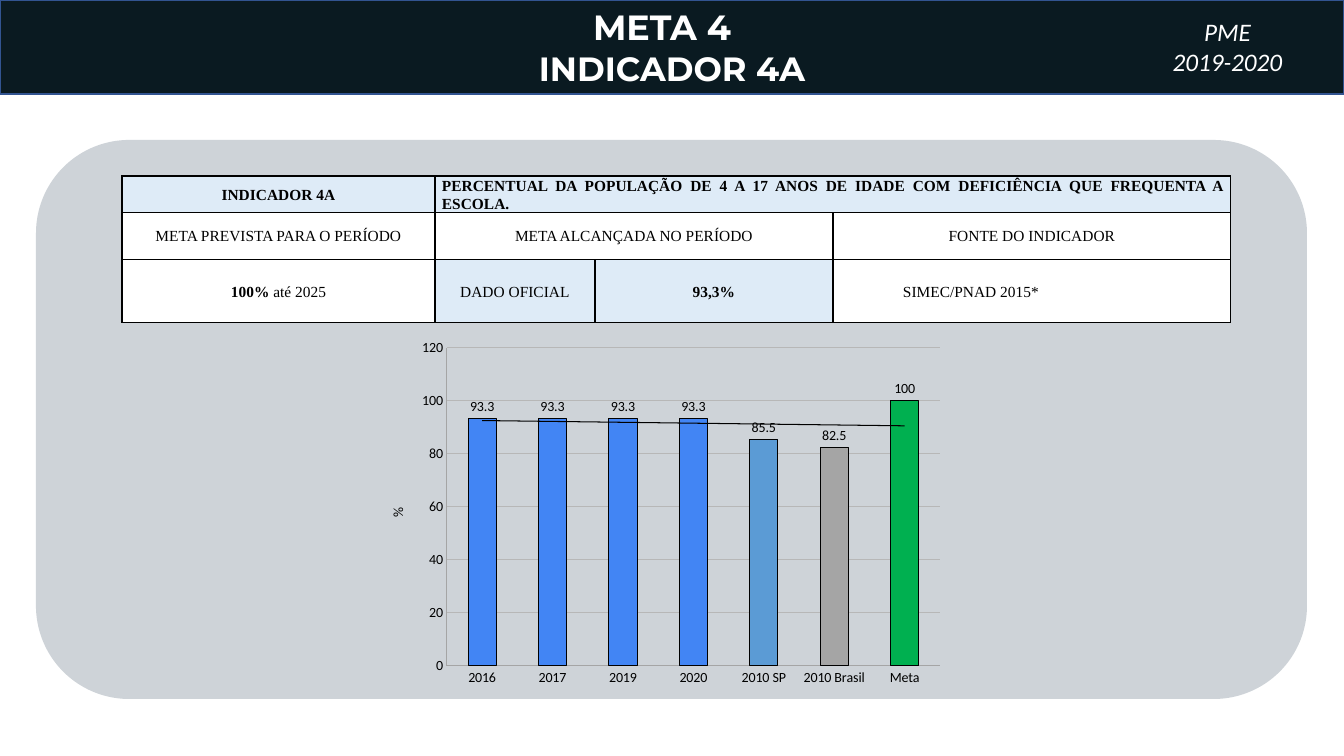
"""Build the slide for goal 4, indicator 4A, with its table and chart."""
from lxml import etree
from pptx import Presentation
from pptx.chart.data import CategoryChartData
from pptx.dml.color import RGBColor
from pptx.enum.chart import XL_CHART_TYPE as ChartType, XL_LABEL_POSITION as LabelPosition
from pptx.enum.chart import XL_TICK_MARK as TickMark
from pptx.enum.shapes import MSO_SHAPE as Preset
from pptx.enum.text import MSO_ANCHOR as Anchor, PP_ALIGN as Align
from pptx.oxml import parse_xml
from pptx.oxml.ns import nsdecls, qn
from pptx.util import Pt

COLORS = {
    "night": "0A1A21", "edge": "325491", "panel": "CED3D8", "white": "FFFFFF",
    "black": "000000", "pale": "DEEBF7", "blue": "4285F4", "sky": "5B9BD5",
    "gray": "A5A5A5", "green": "00B050", "grid": "B7B7B7",
}
PX = 914400 / 100.8
SIZE = (1344, 756)
HEADER = (0, 0, 1344, 94)
PANEL = (36, 140, 1271, 559)
PERIOD = (1096, 11, 263, 72)
TABLE = (122, 176, 1109, 145)
CHART = (369, 333, 583, 360)
PLOT = (447, 348, 493, 318)

TITLE = [("META 4", 25, 20), ("INDICADOR 4A", 24, 0)]
PERIOD_LINES = ["PME", "2019-2020"]
COLUMNS = [313, 160, 238, 398]
ROWS = [35, 47, 63]
SIDE_MARGIN = 7
SOURCE_INDENT = 63

# row, column, columns spanned, fill, alignment, indent, runs
CELLS = [
    (0, 0, 1, "pale", Align.CENTER, 0, [("INDICADOR 4A", True)]),
    (0, 1, 3, "pale", Align.JUSTIFY, 0, [
        ("PERCENTUAL DA POPULAÇÃO DE 4 A 17 ANOS DE IDADE COM DEFICIÊNCIA QUE FREQUENTA A ESCOLA.", True)]),
    (1, 0, 1, "white", Align.CENTER, 0, [("META PREVISTA PARA O PERÍODO", False)]),
    (1, 1, 2, "white", Align.CENTER, 0, [("META ALCANÇADA NO PERÍODO", False)]),
    (1, 3, 1, "white", Align.CENTER, 0, [("FONTE DO INDICADOR", False)]),
    (2, 0, 1, "white", Align.CENTER, 0, [("100%", True), (" até 2025", False)]),
    (2, 1, 1, "pale", Align.CENTER, 0, [("DADO OFICIAL", False)]),
    (2, 2, 1, "pale", Align.CENTER, 0, [("93,3%", True)]),
    (2, 3, 1, "white", Align.JUSTIFY, SOURCE_INDENT, [("SIMEC/PNAD 2015*", False)]),
]
BARS = [
    ("2016", 93.3, "blue"), ("2017", 93.3, "blue"), ("2019", 93.3, "blue"),
    ("2020", 93.3, "blue"), ("2010 SP", 85.5, "sky"), ("2010 Brasil", 82.5, "gray"),
    ("Meta", 100, "green"),
]


def emu(pixels):
    return round(pixels * PX)


def place(frame):
    return [emu(length) for length in frame]


def paint(fill, color):
    fill.solid()
    fill.fore_color.rgb = RGBColor.from_string(COLORS[color])


def draw_line(line, color, width):
    paint(line.fill, color)
    line.width = Pt(width)


def style(font, color, **values):
    font.color.rgb = RGBColor.from_string(COLORS[color])
    for name, value in values.items():
        setattr(font, name, value)


def add_block(page, preset, frame, color):
    block = page.shapes.add_shape(preset, *place(frame))
    block.shadow.inherit = False
    paint(block.fill, color)
    block.line.fill.background()
    return block


def add_lines(box, lines, **values):
    for index, (text, size, right_margin) in enumerate(lines):
        para = box.paragraphs[0] if index == 0 else box.add_paragraph()
        para.alignment = Align.CENTER
        para._p.get_or_add_pPr().set("marR", str(emu(right_margin)))
        span = para.add_run()
        span.text = text
        style(span.font, "white", size=Pt(size), **values)


def add_borders(cell):
    properties = cell._tc.get_or_add_tcPr()
    for index, side in enumerate(("lnL", "lnR", "lnT", "lnB")):
        properties.insert(index, parse_xml(
            f'<a:{side} {nsdecls("a")} w="12700"><a:solidFill>'
            f'<a:srgbClr val="{COLORS["black"]}"/></a:solidFill></a:{side}>'))


def add_table(page):
    table = page.shapes.add_table(len(ROWS), len(COLUMNS), *place(TABLE)).table
    for column, width in zip(table.columns, COLUMNS):
        column.width = emu(width)
    for row, height in zip(table.rows, ROWS):
        row.height = emu(height)
    for cell in table.iter_cells():
        add_borders(cell)
        cell.margin_left = cell.margin_right = emu(SIDE_MARGIN)
        cell.margin_top = cell.margin_bottom = 0
        cell.text_frame.paragraphs[0].font.size = Pt(11)
    for row, column, width, fill, alignment, indent, runs in CELLS:
        cell = table.cell(row, column)
        if width > 1:
            cell.merge(table.cell(row, column + width - 1))
        paint(cell.fill, fill)
        cell.vertical_anchor = Anchor.MIDDLE
        para = cell.text_frame.paragraphs[0]
        para._p.get_or_add_pPr().set("marL", str(emu(indent)))
        for name, value in {"alignment": alignment, "line_spacing": 1.07, "space_after": Pt(8)}.items():
            setattr(para, name, value)
        for text, bold in runs:
            span = para.add_run()
            span.text = text
            style(span.font, "black", name="Times New Roman", size=Pt(11), bold=bold)


def pin_plot(chart):
    area = chart._chartSpace.chart.plotArea
    for old in area.findall(qn("c:layout")):
        area.remove(old)
    layout = etree.Element(qn("c:layout"))
    manual = etree.SubElement(layout, qn("c:manualLayout"))
    left, top, width, height = CHART
    entries = {
        "layoutTarget": "inner", "xMode": "edge", "yMode": "edge",
        "x": (PLOT[0] - left) / width, "y": (PLOT[1] - top) / height,
        "w": PLOT[2] / width, "h": PLOT[3] / height,
    }
    for name, value in entries.items():
        etree.SubElement(manual, qn(f"c:{name}")).set("val", str(value))
    area.insert(0, layout)


def add_trend(series):
    trend = parse_xml(
        f'<c:trendline {nsdecls("c", "a")}><c:spPr><a:ln w="9525"><a:solidFill>'
        f'<a:srgbClr val="{COLORS["black"]}"/></a:solidFill></a:ln></c:spPr>'
        '<c:trendlineType val="linear"/><c:dispRSqr val="0"/><c:dispEq val="0"/></c:trendline>')
    series._element.find(qn("c:cat")).addprevious(trend)


def add_chart(page):
    names, values, colors = zip(*BARS)
    data = CategoryChartData()
    data.categories = names
    data.add_series("Series 1", values)
    chart = page.shapes.add_chart(ChartType.COLUMN_CLUSTERED, *place(CHART), data).chart
    chart.has_legend = chart.has_title = False
    style(chart.font, "black", name="Calibri", size=Pt(10))
    for axis in (chart.category_axis, chart.value_axis):
        axis.major_tick_mark = axis.minor_tick_mark = TickMark.NONE
        draw_line(axis.format.line, "gray", 0.75)
    scale = chart.value_axis
    for name, value in {"minimum_scale": 0, "maximum_scale": 120, "major_unit": 20}.items():
        setattr(scale, name, value)
    draw_line(scale.major_gridlines.format.line, "grid", 0.75)
    span = scale.axis_title.text_frame.paragraphs[0].add_run()
    span.text = "%"
    style(span.font, "black", name="Calibri", size=Pt(10), bold=False)
    plot = chart.plots[0]
    plot.gap_width = 150
    plot.vary_by_categories = False
    series = plot.series[0]
    paint(series.format.fill, "blue")
    draw_line(series.format.line, "black", 0.75)
    for index, color in enumerate(colors):
        if color != "blue":
            paint(series.points[index].format.fill, color)
            draw_line(series.points[index].format.line, "black", 0.75)
    labels = series.data_labels
    labels.show_value = True
    labels.position = LabelPosition.OUTSIDE_END
    style(labels.font, "black", name="Calibri", size=Pt(10))
    add_trend(series)
    pin_plot(chart)


def main():
    deck = Presentation()
    deck.slide_width, deck.slide_height = place(SIZE)
    page = deck.slides.add_slide(deck.slide_layouts[6])
    header = add_block(page, Preset.RECTANGLE, HEADER, "night")
    draw_line(header.line, "edge", 1)
    header.text_frame.vertical_anchor = Anchor.MIDDLE
    add_lines(header.text_frame, TITLE, name="Montserrat", bold=True)
    add_block(page, Preset.ROUNDED_RECTANGLE, PANEL, "panel")
    add_table(page)
    add_chart(page)
    period = page.shapes.add_textbox(*place(PERIOD)).text_frame
    period.word_wrap = True
    add_lines(period, [(text, 18, 0) for text in PERIOD_LINES], name="Calibri", italic=True)
    deck.save("out.pptx")


if __name__ == "__main__":
    main()
